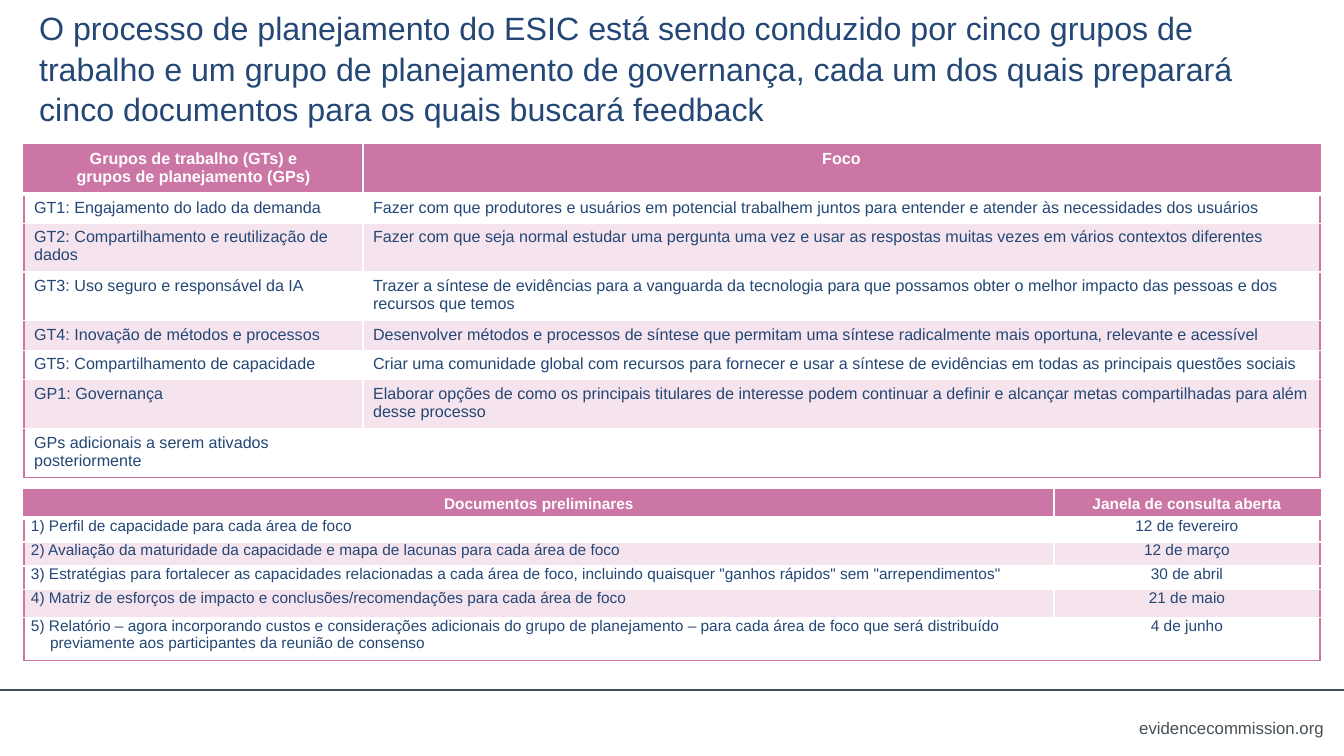
from copy import deepcopy

from lxml import etree
from pptx import Presentation
from pptx import util as u
from pptx.dml.color import RGBColor
from pptx.enum import shapes, text
from pptx.oxml import ns

PX = 914400 / 100.8
FONT = "Arial"
PINK, PALE, WHITE = "CC76A6", "F5E4ED", "FFFFFF"
NAVY, GREY = "244776", "464F55"
LEFT, CENTER, RIGHT = text.PP_ALIGN.LEFT, text.PP_ALIGN.CENTER, text.PP_ALIGN.RIGHT

TITLE = (
    "O processo de planejamento do ESIC está sendo conduzido por cinco grupos de trabalho "
    "e um grupo de planejamento de governança, cada um dos quais preparará cinco documentos "
    "para os quais buscará feedback"
)

GROUPS = [
    ("Grupos de trabalho (GTs) e\vgrupos de planejamento (GPs)", "Foco"),
    ("GT1: Engajamento do lado da demanda",
     "Fazer com que produtores e usuários em potencial trabalhem juntos para entender "
     "e atender às necessidades dos usuários"),
    ("GT2: Compartilhamento e reutilização de dados",
     "Fazer com que seja normal estudar uma pergunta uma vez e usar as respostas "
     "muitas vezes em vários contextos diferentes"),
    ("GT3: Uso seguro e responsável da IA",
     "Trazer a síntese de evidências para a vanguarda da tecnologia para que possamos "
     "obter o melhor impacto das pessoas e dos recursos que temos"),
    ("GT4: Inovação de métodos e processos",
     "Desenvolver métodos e processos de síntese que permitam uma síntese radicalmente "
     "mais oportuna, relevante e acessível"),
    ("GT5: Compartilhamento de capacidade",
     "Criar uma comunidade global com recursos para fornecer e usar a síntese de "
     "evidências em todas as principais questões sociais"),
    ("GP1: Governança",
     "Elaborar opções de como os principais titulares de interesse podem continuar a "
     "definir e alcançar metas compartilhadas para além desse processo"),
    ("GPs adicionais a serem ativados posteriormente", ""),
]

DOCUMENTS = [
    ("Documentos preliminares", "Janela de consulta aberta"),
    ("1) Perfil de capacidade para cada área de foco", "12 de fevereiro"),
    ("2) Avaliação da maturidade da capacidade e mapa de lacunas para cada área de foco",
     "12 de março"),
    ("3) Estratégias para fortalecer as capacidades relacionadas a cada área de foco, "
     'incluindo quaisquer "ganhos rápidos" sem "arrependimentos"', "30 de abril"),
    ("4) Matriz de esforços de impacto e conclusões/recomendações para cada área de foco",
     "21 de maio"),
    ("5) Relatório – agora incorporando custos e considerações adicionais do grupo de "
     "planejamento – para cada área de foco que será distribuído previamente aos "
     "participantes da reunião de consenso", "4 de junho"),
]


def px(value):
    return u.Emu(round(value * PX))


def color(value):
    return RGBColor.from_string(value)


def write(frame, content, size, ink=NAVY, bold=False, align=LEFT, after=0, spacing=None):
    paragraph = frame.paragraphs[0]
    paragraph.text = content
    paragraph.alignment = align
    paragraph.space_after = u.Pt(after)
    paragraph.line_spacing = spacing
    for run in paragraph.runs:
        run.font.name = FONT
        run.font.size = u.Pt(size)
        run.font.bold = bold
        run.font.color.rgb = color(ink)
    for line_break in paragraph._p.findall(ns.qn("a:br")):
        line_break.insert(0, deepcopy(paragraph.runs[0].font._rPr))
    return paragraph


def add_title(slide):
    title = slide.shapes.title
    title.left, title.top, title.width, title.height = px(29), px(12), px(1290), px(111)
    frame = title.text_frame
    frame.word_wrap = True
    frame.auto_size = text.MSO_AUTO_SIZE.NONE
    frame.vertical_anchor = text.MSO_ANCHOR.MIDDLE
    write(frame, TITLE, 23, spacing=1.04)


def add_border(cell, side, ink, width):
    properties = cell._tc.get_or_add_tcPr()
    line = etree.SubElement(properties, ns.qn(f"a:ln{side}"), w=str(u.Pt(width)))
    fill = etree.SubElement(line, ns.qn("a:solidFill"))
    etree.SubElement(fill, ns.qn("a:srgbClr"), val=ink)


def style_cell(cell, row, column, last_row):
    add_border(cell, "L", PINK if column == 0 else WHITE, 1)
    add_border(cell, "R", PINK if column == 1 else WHITE, 1)
    add_border(cell, "T", PINK if row == 0 else WHITE, 3 if row == 1 else 1)
    add_border(cell, "B", PINK if row == last_row else WHITE, 3 if row == 0 else 1)
    banded = row % 2 == 0 and row < last_row
    cell.fill.solid()
    cell.fill.fore_color.rgb = color(PINK if row == 0 else PALE if banded else WHITE)


def add_table(slide, top, widths, heights, rows, size, second_align=LEFT, after=0):
    frame = slide.shapes.add_table(
        len(rows), len(widths), px(24), px(top), px(sum(widths)), px(sum(heights)))
    table = frame.table
    table.horz_banding = False
    for column, width in zip(table.columns, widths):
        column.width = px(width)
    for row, height in zip(table.rows, heights):
        row.height = px(height)
    for row, values in enumerate(rows):
        for column, value in enumerate(values):
            cell = table.cell(row, column)
            style_cell(cell, row, column, len(rows) - 1)
            if row == 0:
                write(cell.text_frame, value, size, WHITE, bold=True, align=CENTER)
            else:
                write(cell.text_frame, value, size,
                      align=second_align if column else LEFT, after=0 if column else after)
    return table


def add_documents(slide):
    table = add_table(slide, 490, [1030, 266], [28, 24, 24, 24, 28, 43], DOCUMENTS, 11,
                      second_align=CENTER, after=3)
    for cell in table.iter_cells():
        cell.margin_left = cell.margin_right = px(7)
        cell.margin_top = cell.margin_bottom = 0
    for column in range(2):
        table.cell(0, column).vertical_anchor = text.MSO_ANCHOR.MIDDLE
    report = table.cell(len(DOCUMENTS) - 1, 0).text_frame.paragraphs[0]
    properties = report._p.get_or_add_pPr()
    properties.set("marL", str(px(19)))
    properties.set("indent", str(px(-19)))


def add_footer(slide):
    rule = slide.shapes.add_connector(
        shapes.MSO_CONNECTOR.STRAIGHT, px(0), px(690), px(1344), px(690))
    rule.line.color.rgb = color(GREY)
    rule.line.width = u.Pt(2)
    etree.SubElement(rule._element.spPr, ns.qn("a:effectLst"))
    box = slide.shapes.add_textbox(px(1126), px(713), px(208), px(30))
    box.text_frame.word_wrap = True
    write(box.text_frame, "evidencecommission.org", 12, GREY, align=RIGHT, after=2)


def main():
    presentation = Presentation()
    presentation.slide_width, presentation.slide_height = px(1344), px(756)
    slide = presentation.slides.add_slide(presentation.slide_layouts[5])
    add_footer(slide)
    add_title(slide)
    add_table(slide, 145, [339, 957], [46, 28, 46, 46, 28, 28, 46, 46], GROUPS, 11.5)
    add_documents(slide)
    presentation.save("out.pptx")


if __name__ == "__main__":
    main()
